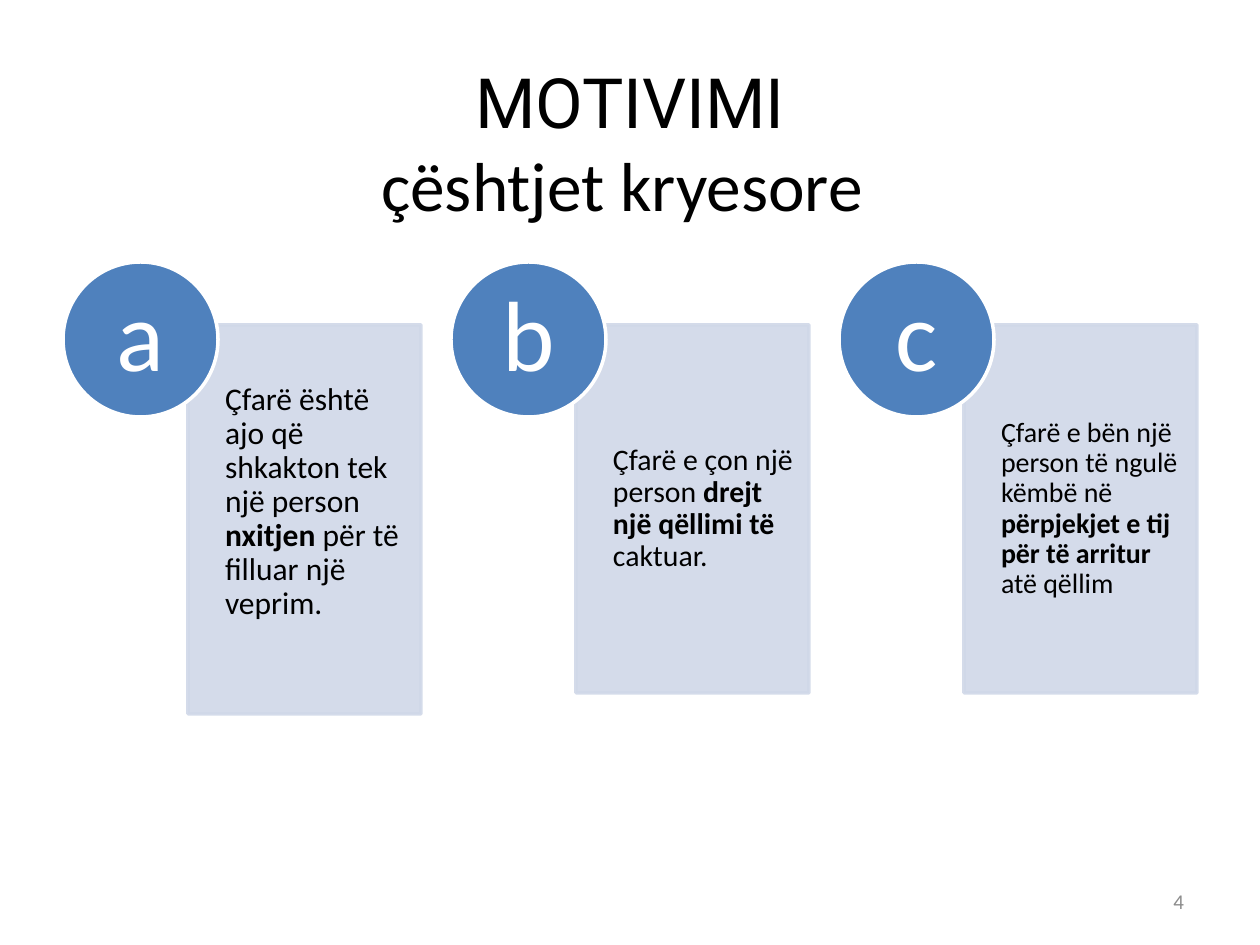
"""Build a slide with three lettered cards on the key questions of motivation."""
import pptx
import pptx.util
import pptx.dml.color
import pptx.enum.shapes
import pptx.enum.text
import pptx.oxml.ns
import lxml.etree

EMU_PER_PX = 914400 // 126
FONT = "Calibri"
COLORS = {
    "text": "000000",
    "circle": "4F81BD",
    "card": "D0D8E8",
    "white": "FFFFFF",
    "number": "8C8C8C",
}
CARD_PITCH = 388
CARDS = [
    ("a", 389, 18, 18, 52,
     [("Çfarë është ajo që shkakton tek një person ", False),
      ("nxitjen ", True), ("për të filluar një veprim.", False)]),
    ("b", 368, 17, 16, 16,
     [("Çfarë e çon një person ", False),
      ("drejt një qëllimi të ", True), ("caktuar.", False)]),
    ("c", 368, 16, 15, 15,
     [("Çfarë e bën një person të ngulë këmbë në ", False),
      ("përpjekjet e tij për të arritur ", True), ("atë qëllim", False)]),
]


def px(length):
    """Turn pixels into EMU."""
    return pptx.util.Emu(length * EMU_PER_PX)


def color(name):
    """Look up a named colour."""
    return pptx.dml.color.RGBColor.from_string(COLORS[name])


def set_font(font, size, color_name):
    """Set the family, size and colour of a font."""
    font.name = FONT
    font.size = pptx.util.Pt(size)
    font.color.rgb = color(color_name)


def set_frame(frame, left=0, top=0, right=0, bottom=0):
    """Wrap and middle-anchor a text frame with the given insets."""
    frame.word_wrap = True
    frame.auto_size = pptx.enum.text.MSO_AUTO_SIZE.NONE
    frame.vertical_anchor = pptx.enum.text.MSO_ANCHOR.MIDDLE
    frame.margin_left, frame.margin_top = px(left), px(top)
    frame.margin_right, frame.margin_bottom = px(right), px(bottom)


def set_opacity(shape, percent):
    """Make the fill and line of a shape partly transparent."""
    for element in shape.element.spPr.iter(pptx.oxml.ns.qn("a:srgbClr")):
        alpha = lxml.etree.SubElement(element, pptx.oxml.ns.qn("a:alpha"))
        alpha.set("val", str(percent * 1000))


def add_shape(slide, kind, box, fill, line):
    """Add a filled and outlined preset shape."""
    shape = slide.shapes.add_shape(kind, *map(px, box))
    shape.shadow.inherit = False
    shape.fill.solid()
    shape.fill.fore_color.rgb = color(fill)
    shape.line.color.rgb = color(line)
    shape.line.width = pptx.util.Pt(2)
    return shape


def add_title(slide):
    """Place and fill the title placeholder."""
    title = slide.shapes.title
    title.left, title.top, title.width, title.height = map(px, (63, 63, 1134, 158))
    set_frame(title.text_frame, 13, 6, 13, 6)
    paragraph = title.text_frame.paragraphs[0]
    paragraph.alignment = pptx.enum.text.PP_ALIGN.CENTER
    set_font(paragraph.font, 39.6, "text")
    first = paragraph.add_run()
    first.text = "MOTIVIMI"
    first.font.name = "Roboto"
    paragraph.add_line_break()
    second = paragraph.add_run()
    second.text = "çështjet kryesore "
    second.font.name = FONT


def add_card(slide, left, height, size, top_inset, bottom_inset, runs):
    """Add a pale rectangle holding a question."""
    card = add_shape(slide, pptx.enum.shapes.MSO_SHAPE.RECTANGLE,
                     (left, 325, 233, height), "card", "card")
    set_opacity(card, 90)
    set_frame(card.text_frame, 37, top_inset, top_inset, bottom_inset)
    paragraph = card.text_frame.paragraphs[0]
    paragraph.alignment = pptx.enum.text.PP_ALIGN.LEFT
    paragraph.line_spacing = 0.9
    set_font(paragraph.font, size, "text")
    for text, bold in runs:
        run = paragraph.add_run()
        run.text = text
        run.font.bold = bold


def add_circle(slide, left, letter):
    """Add a blue circle with its letter."""
    circle = add_shape(slide, pptx.enum.shapes.MSO_SHAPE.OVAL,
                       (left, 262, 155, 155), "circle", "white")
    set_frame(circle.text_frame)
    paragraph = circle.text_frame.paragraphs[0]
    paragraph.text = letter
    paragraph.alignment = pptx.enum.text.PP_ALIGN.CENTER
    paragraph.line_spacing = 0.9
    set_font(paragraph.font, 57, "white")


def add_slide_number(slide, number):
    """Add the slide number at the bottom right."""
    box = slide.shapes.add_textbox(*map(px, (903, 876, 294, 50)))
    set_frame(box.text_frame, 13, 6, 13, 6)
    paragraph = box.text_frame.paragraphs[0]
    paragraph.text = number
    paragraph.alignment = pptx.enum.text.PP_ALIGN.RIGHT
    set_font(paragraph.font, 12, "number")


def main():
    """Build and save the presentation."""
    presentation = pptx.Presentation()
    presentation.slide_width = px(1260)
    presentation.slide_height = px(945)
    slide = presentation.slides.add_slide(presentation.slide_layouts[5])
    add_title(slide)
    for index, (letter, *card) in enumerate(CARDS):
        left = 63 + index * CARD_PITCH
        add_card(slide, left + 125, *card)
        add_circle(slide, left, letter)
    add_slide_number(slide, "4")
    presentation.save("out.pptx")


if __name__ == "__main__":
    main()
